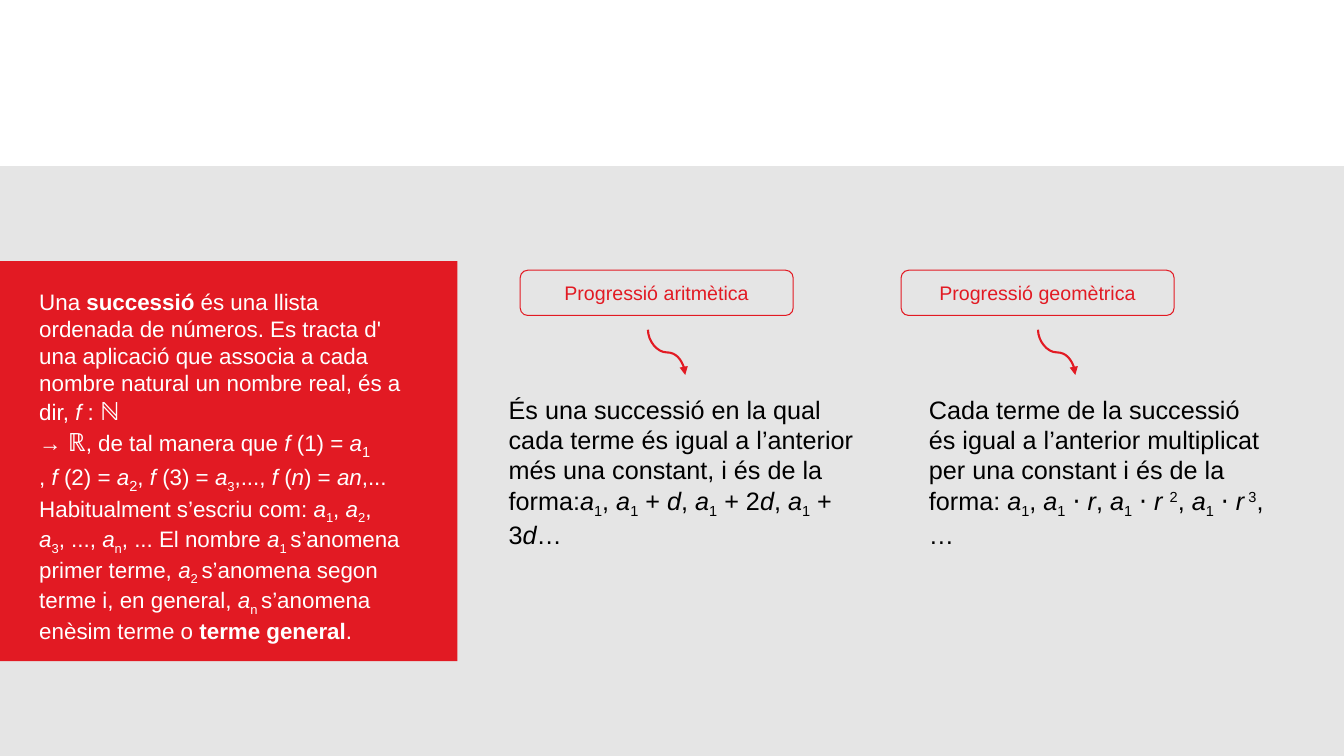
from lxml import etree
from pptx import Presentation
from pptx.dml.color import RGBColor
from pptx.enum.shapes import MSO_CONNECTOR, MSO_SHAPE
from pptx.enum.text import MSO_ANCHOR, MSO_AUTO_SIZE, PP_ALIGN
from pptx.oxml.ns import qn
from pptx.util import Cm, Pt

RECTANGLE = MSO_SHAPE.RECTANGLE
ROUNDED = MSO_SHAPE.ROUNDED_RECTANGLE
CURVE = MSO_CONNECTOR.CURVE
MIDDLE = MSO_ANCHOR.MIDDLE
GROW = MSO_AUTO_SIZE.SHAPE_TO_FIT_TEXT
LEFT, CENTER = PP_ALIGN.LEFT, PP_ALIGN.CENTER

FONT = "Arial"
RED, GREY, WHITE, BLACK = "E21A23", "E5E5E5", "FFFFFF", "000000"
SLIDE_WIDTH, SLIDE_HEIGHT = 33.87, 19.05
LARGE_SIZE = 18
BOLD, ITALIC, SUBSCRIPT, SUPERSCRIPT, LARGE = "*/_^~"
BASELINES = {SUBSCRIPT: "-25000", SUPERSCRIPT: "30000"}

DEFINITION = [
    "Una *successió *és una llista ordenada de números. Es tracta d' una aplicació "
    "que associa a cada nombre natural un nombre real, és a dir, /f /: ~ℕ~",
    "→ ~ℝ~, de tal manera que /f /(1) = /a/_~1~_",
    ", /f /(2) = /a/_~2~_, /f /(3) = /a/_3_,..., /f /(/n/) = /an/,... "
    "Habitualment s’escriu com: /a/_1_, /a/_2_, /a/_3_, ..., /a/_n_, ... "
    "El nombre /a/_1 _s’anomena primer terme, /a/_2 _s’anomena segon terme i, "
    "en general, /a/_n _s’anomena enèsim terme o *terme general*.",
]
ARITHMETIC = (
    "És una successió en la qual cada terme és igual a l’anterior més una constant, "
    "i és de la forma:/a/_1_, /a/_1_ + /d/, /a/_1_ + 2/d/, /a/_1_ + 3/d/…"
)
GEOMETRIC = (
    "Cada terme de la successió és igual a l’anterior multiplicat per una constant "
    "i és de la forma: /a/_1_, /a/_1_ ⋅ /r/, /a/_1_ ⋅ /r /^2^, /a/_1_ ⋅ /r/^ 3^, …"
)


def rgb(value):
    """Return the colour of a hex string."""
    return RGBColor.from_string(value)


def split_marks(text):
    """Yield each stretch of text with the set of marks active on it."""
    active, stretch = set(), ""
    for character in text:
        if character in (BOLD, ITALIC, SUBSCRIPT, SUPERSCRIPT, LARGE):
            if stretch:
                yield stretch, set(active)
            active ^= {character}
            stretch = ""
        else:
            stretch += character
    if stretch:
        yield stretch, active


def write_text(paragraph, text, size=18, color=BLACK, align=LEFT):
    """Write marked text into a paragraph."""
    paragraph.alignment = align
    for stretch, marks in split_marks(text):
        run = paragraph.add_run()
        run.text = stretch
        run.font.name = FONT
        run.font.size = Pt(LARGE_SIZE if LARGE in marks else size)
        run.font.color.rgb = rgb(color)
        run.font.bold = BOLD in marks
        run.font.italic = ITALIC in marks
        for mark in marks & set(BASELINES):
            run.font._element.set("baseline", BASELINES[mark])


def add_text(slide, left, top, width, height, paragraphs, **text_format):
    """Add a wrapping text box with one paragraph per marked text."""
    box = slide.shapes.add_textbox(Cm(left), Cm(top), Cm(width), Cm(height))
    frame = box.text_frame
    frame.word_wrap = True
    frame.auto_size = GROW
    for index, text in enumerate(paragraphs):
        paragraph = frame.add_paragraph() if index else frame.paragraphs[0]
        write_text(paragraph, text, **text_format)


def add_panel(slide, left, top, width, height, color):
    """Add a plain filled rectangle."""
    panel = slide.shapes.add_shape(RECTANGLE, Cm(left), Cm(top), Cm(width), Cm(height))
    panel.shadow.inherit = False
    panel.fill.solid()
    panel.fill.fore_color.rgb = rgb(color)
    panel.line.fill.background()


def add_tag(slide, left, top, width, height, text):
    """Add an outlined rounded label."""
    tag = slide.shapes.add_shape(ROUNDED, Cm(left), Cm(top), Cm(width), Cm(height))
    tag.shadow.inherit = False
    tag.fill.background()
    tag.line.color.rgb = rgb(RED)
    tag.line.width = Pt(0.75)
    tag.text_frame.word_wrap = True
    tag.text_frame.vertical_anchor = MIDDLE
    write_text(tag.text_frame.paragraphs[0], text, size=14, color=RED, align=CENTER)


def add_curved_arrow(slide, left, top, width, height):
    """Add an S-shaped arrow that leaves and arrives vertically."""
    middle_x, middle_y = left + width / 2, top + height / 2
    arrow = slide.shapes.add_connector(
        CURVE,
        Cm(middle_x + height / 2), Cm(middle_y - width / 2),
        Cm(middle_x - height / 2), Cm(middle_y + width / 2),
    )
    arrow.line.color.rgb = rgb(RED)
    arrow.line.width = Pt(1.5)
    properties = arrow._element.spPr
    properties.find(qn("a:xfrm")).set("rot", "16200000")
    etree.SubElement(properties.find(qn("a:ln")), qn("a:tailEnd"), type="triangle")
    etree.SubElement(properties, qn("a:effectLst"))


def add_definition(slide, left, top, width, height):
    """Add the red panel that defines a sequence."""
    add_panel(slide, left, top, width, height, RED)
    add_text(slide, left + 0.74, top + 0.56, width - 1.55, height - 2.13,
             DEFINITION, size=16, color=WHITE)


def add_progression(slide, left, top, width, title, text, tag_shift, arrow_shift):
    """Add a column with its label, arrow and explanation."""
    add_tag(slide, left + tag_shift, top, 6.88, 1.14, title)
    add_curved_arrow(slide, left + arrow_shift, top + 1.5, 0.94, 1.14)
    add_text(slide, left, top + 3, width, 3.33, [text])


def main():
    """Build and save the slide."""
    presentation = Presentation()
    presentation.slide_width = Cm(SLIDE_WIDTH)
    presentation.slide_height = Cm(SLIDE_HEIGHT)
    slide = presentation.slides.add_slide(presentation.slide_layouts[6])
    add_panel(slide, 0, 4.19, SLIDE_WIDTH, SLIDE_HEIGHT - 4.19, GREY)
    add_definition(slide, 0, 6.58, 11.53, 10.08)
    add_progression(slide, 12.57, 6.81, 9.45, "Progressió aritmètica", ARITHMETIC,
                    tag_shift=0.54, arrow_shift=3.76)
    add_progression(slide, 23.16, 6.81, 9.14, "Progressió geomètrica", GEOMETRIC,
                    tag_shift=-0.45, arrow_shift=3)
    presentation.save("out.pptx")


if __name__ == "__main__":
    main()
